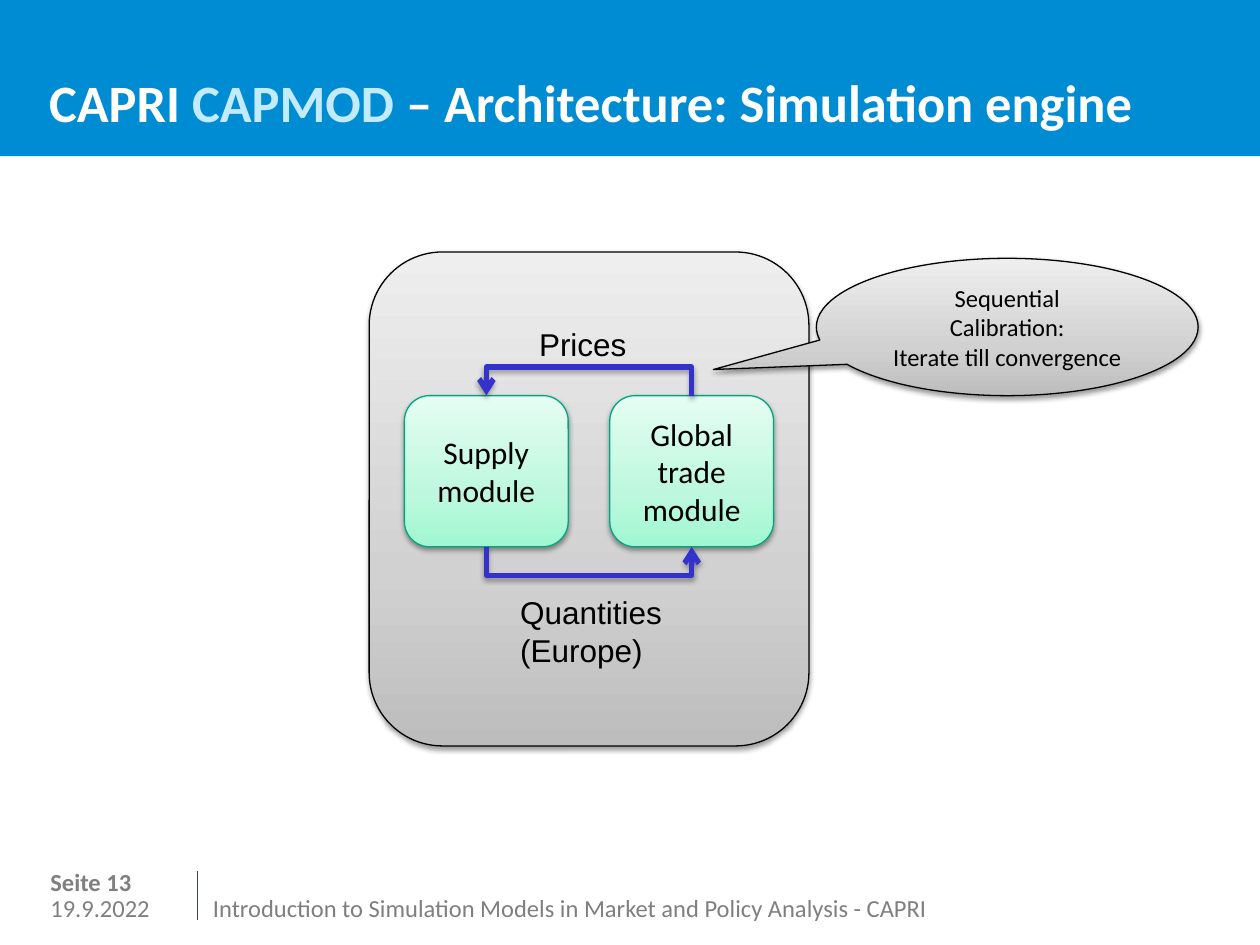
from dataclasses import dataclass

import lxml.etree
import pptx
import pptx.dml.color
import pptx.enum.shapes
import pptx.enum.text
import pptx.oxml.ns
import pptx.util

SHAPE = pptx.enum.shapes.MSO_SHAPE
LINK = pptx.enum.shapes.MSO_CONNECTOR
ALIGN = pptx.enum.text.PP_ALIGN
ANCHOR = pptx.enum.text.MSO_ANCHOR
qn = pptx.oxml.ns.qn

# Grid of 100 columns by 75 rows, each cell 0.1 inch
COLS, ROWS = 100, 75
GRAY = ("BDBDBD", "D1D1D1", "EEEEEE")
MINT = ("9FF7D1", "BDF8DE", "E5FDF2")
MUTED, BLACK, WHITE = "7F7F7F", "000000", "FFFFFF"
TOP, BOTTOM = 0, 2  # connection sites of a rounded box


@dataclass
class Run:
    text: str
    size: float = 18
    hue: str = BLACK
    bold: bool = False
    font: str = "Calibri"


@dataclass
class Area:
    x: float
    y: float
    w: float
    h: float


@dataclass
class Node:
    kind: int
    area: Area
    fade: tuple[str, str, str]
    edge: str
    paras: list[list[Run]]


@dataclass
class Label:
    area: Area
    paras: list[list[Run]]
    inset: bool = False
    wrap: bool = True
    base: bool = False
    pitch: float | None = None


def cell(count: float) -> int:
    return pptx.util.Inches(count / 10)


def place(area: Area) -> tuple[int, int, int, int]:
    return cell(area.x), cell(area.y), cell(area.w), cell(area.h)


def paint(part, hue: str) -> None:
    part.rgb = pptx.dml.color.RGBColor.from_string(hue)


def add(parent, tag: str, **attrs):
    return lxml.etree.SubElement(parent, qn(tag), {k: str(v) for k, v in attrs.items()})


def write(frame, paras: list[list[Run]], align=ALIGN.LEFT, pitch=None) -> None:
    """Fill a frame run by run; a line feed in a run is a line break."""
    for i, runs in enumerate(paras):
        para = frame.paragraphs[0] if i == 0 else frame.add_paragraph()
        para.alignment = align
        if pitch:
            para.line_spacing = pptx.util.Pt(pitch)
        for run in runs:
            for j, piece in enumerate(run.text.split("\n")):
                if j:
                    para.add_line_break()
                item = para.add_run()
                item.text = piece
                item.font.name, item.font.bold = run.font, run.bold
                item.font.size = pptx.util.Pt(run.size)
                paint(item.font.color, run.hue)


def shade(item, alpha: int, gap: float) -> None:
    """Soft black shadow straight below; set after fill and line."""
    glow = add(add(item._element.spPr, "a:effectLst"), "a:outerShdw",
               blurRad=pptx.util.Pt(3.1), dist=pptx.util.Pt(gap),
               dir=5400000, rotWithShape=0)
    add(add(glow, "a:srgbClr", val=BLACK), "a:alpha", val=alpha * 1000)


def blend(shape, fade: tuple[str, str, str]) -> None:
    shape.fill.gradient()
    grad = shape._element.spPr.find(qn("a:gradFill"))
    for child in list(grad):
        grad.remove(child)
    stops = add(grad, "a:gsLst")
    for share, hue in zip((0, 35, 100), fade):
        add(add(stops, "a:gs", pos=share * 1000), "a:srgbClr", val=hue)
    add(grad, "a:lin", ang=270 * 60000, scaled=1)


def draw_node(slide, node: Node):
    shape = slide.shapes.add_shape(node.kind, *place(node.area))
    blend(shape, node.fade)
    paint(shape.line.color, node.edge)
    shape.line.width = pptx.util.Pt(0.75)
    shade(shape, 38, 1.6)
    shape.text_frame.word_wrap = True
    shape.text_frame.vertical_anchor = ANCHOR.MIDDLE
    write(shape.text_frame, node.paras, ALIGN.CENTER)
    return shape


def draw_label(slide, label: Label) -> None:
    frame = slide.shapes.add_textbox(*place(label.area)).text_frame
    frame.word_wrap = label.wrap
    frame.vertical_anchor = ANCHOR.BOTTOM if label.base else ANCHOR.TOP
    if not label.inset:
        frame.margin_left = frame.margin_right = 0
        frame.margin_top = frame.margin_bottom = 0
    write(frame, label.paras, pitch=label.pitch)


def draw_loop(slide, start, end, site: int, flip: str) -> None:
    """Three-part arrow that leaves and enters two boxes on the same side."""
    line = slide.shapes.add_connector(LINK.ELBOW, 0, 0, 0, 0)
    line.begin_connect(start, site)
    line.end_connect(end, site)
    mids = [box.left + box.width // 2 for box in (start, end)]
    span = abs(mids[1] - mids[0])
    level = start.top + (start.height if site == BOTTOM else 0)
    # A sliver turned by 270 degrees; the bend lies far outside it
    thin, reach = 1588, cell(2.5)
    line.left, line.top = (sum(mids) - thin) // 2, level - span // 2
    line.width, line.height = thin, span
    props = line._element.spPr
    frame = props.find(qn("a:xfrm"))
    for name in ("flipH", "flipV"):
        frame.attrib.pop(name, None)
    frame.set("rot", str(270 * 60000))
    frame.set(flip, "1")
    shape = props.find(qn("a:prstGeom"))
    for child in list(shape):
        shape.remove(child)
    bend = round(reach / thin * 100000)
    add(add(shape, "a:avLst"), "a:gd", name="adj1", fmla=f"val {bend}")
    paint(line.line.color, "3333CC")
    line.line.width = pptx.util.Pt(3)
    add(props.find(qn("a:ln")), "a:tailEnd", type="arrow")
    shade(line, 35, 1.8)


def main() -> None:
    deck = pptx.Presentation()
    deck.slide_width, deck.slide_height = cell(COLS), cell(ROWS)
    slide = deck.slides.add_slide(deck.slide_layouts[6])

    # Footer
    foot = 70.9
    for area, run in (
        (Area(4, foot, 10.6, 2.8), Run("19.9.2022", 14, MUTED)),
        (Area(4, 68.8, 10.6, 2), Run("Seite 13", 14, MUTED, True)),
        (Area(16.9, foot, 66.3, 3), Run(
            "Introduction to Simulation Models in Market and Policy Analysis - CAPRI",
            14, MUTED)),
    ):
        draw_label(slide, Label(area, [[run]]))
    rule = slide.shapes.add_connector(
        LINK.STRAIGHT, cell(15.7), cell(69.1), cell(15.7), cell(73))
    paint(rule.line.color, "37464B")
    rule.line.width = pptx.util.Pt(0.75)
    add(rule._element.spPr, "a:effectLst")

    # Title band
    band = slide.shapes.add_shape(SHAPE.RECTANGLE, *place(Area(0, -0.2, COLS, 12.6)))
    band.shadow.inherit = False
    band.fill.solid()
    paint(band.fill.fore_color, "008CD2")
    band.line.fill.background()
    draw_label(slide, Label(Area(3.9, 0, 92.1, 10.6), [[
        Run("CAPRI ", 30, WHITE, True),
        Run("CAPMOD", 30, "C3EBFF", True),
        Run(" – Architecture: Simulation engine", 30, WHITE, True),
    ]], base=True, pitch=35))

    # Engine with its two modules
    draw_node(slide, Node(SHAPE.ROUNDED_RECTANGLE, Area(29.3, 20, 34.9, 39.2),
                          GRAY, BLACK, []))
    supply, trade = (
        draw_node(slide, Node(SHAPE.ROUNDED_RECTANGLE, Area(32.1 + 16.3 * i, 31.4, 13, 12),
                              MINT, "00A67F", [[Run(text)] for text in texts]))
        for i, texts in enumerate((["Supply\nmodule"], ["Global", "trade\nmodule"]))
    )

    # Exchange between the modules
    draw_loop(slide, supply, trade, BOTTOM, "flipH")
    draw_loop(slide, trade, supply, TOP, "flipV")
    for area, texts in (
        (Area(41.8, 25.3, 9, 4), ["Prices"]),
        (Area(40.3, 46.6, 13.4, 7.1), ["Quantities", "(Europe)"]),
    ):
        draw_label(slide, Label(area, [[Run(text, font="Arial")] for text in texts],
                                inset=True, wrap=False))

    # Callout
    note = draw_node(slide, Node(
        SHAPE.OVAL_CALLOUT, Area(64.8, 20.5, 30.3, 10.9), GRAY, BLACK,
        [[Run(text, 14)] for text in
         ("Sequential", "Calibration:", "Iterate till convergence")]))
    note.adjustments[0], note.adjustments[1] = -0.77, 0.31

    deck.save("out.pptx")


if __name__ == "__main__":
    main()
